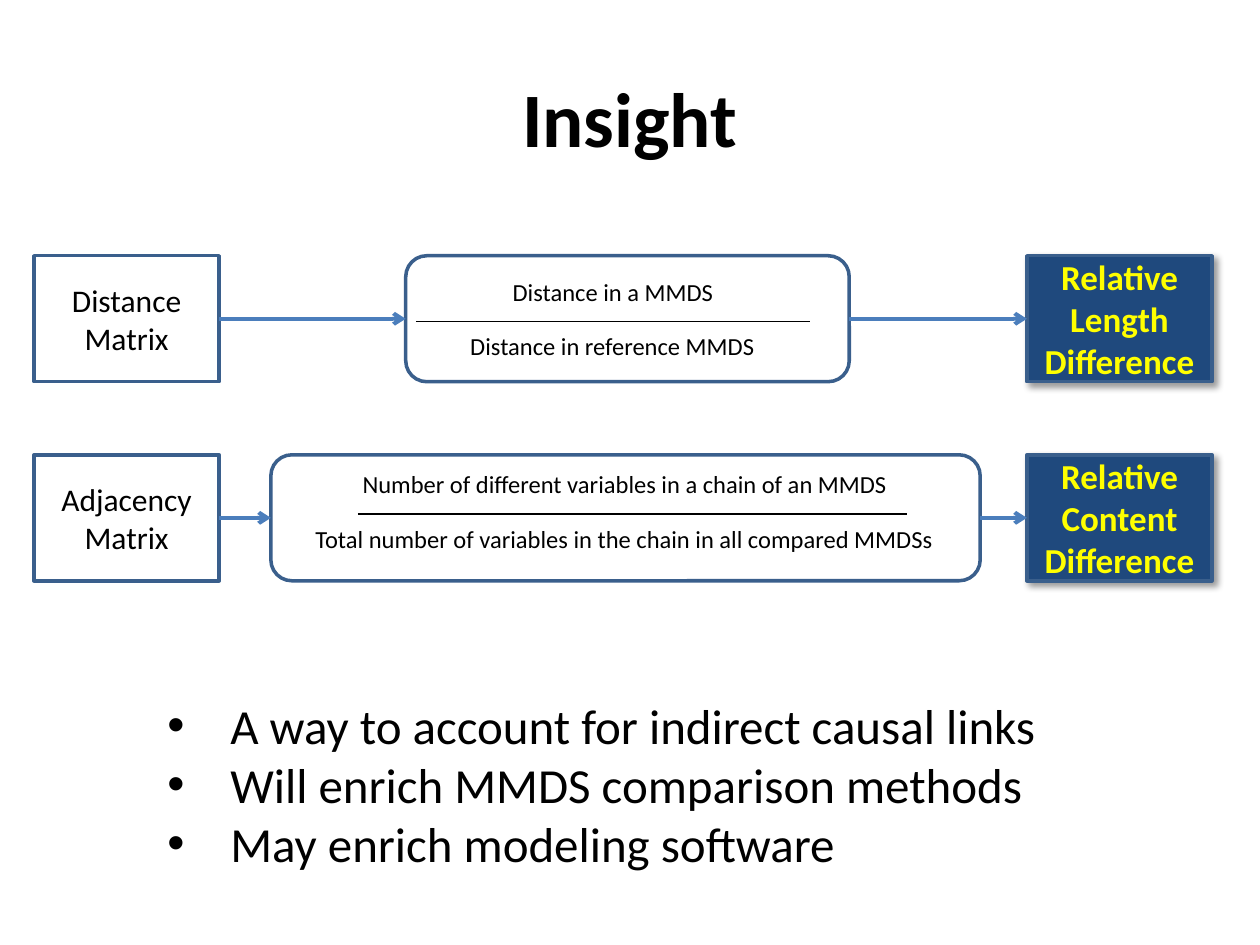
from lxml import etree
from pptx import Presentation
from pptx.dml.color import RGBColor
from pptx.enum.shapes import MSO_CONNECTOR, MSO_SHAPE
from pptx.enum.text import MSO_ANCHOR, PP_ALIGN
from pptx.oxml.ns import qn
from pptx.util import Pt

PX = 9144
TITLE_ONLY = 5
FONT = "Calibri"
BLACK, BORDER, ARROW = "000000", "3A5F8C", "4B7EBC"
NAVY, YELLOW = "1F497D", "FFFF00"
RECTANGLE, ROUNDED = MSO_SHAPE.RECTANGLE, MSO_SHAPE.ROUNDED_RECTANGLE
STRAIGHT = MSO_CONNECTOR.STRAIGHT
MIDDLE, TOP = MSO_ANCHOR.MIDDLE, MSO_ANCHOR.TOP
CENTER, LEFT = PP_ALIGN.CENTER, PP_ALIGN.LEFT
LEFT_SIDE, RIGHT_SIDE = 1, 3
BOX_HEIGHT, BOX_WIDTH = 100, 147
SOURCE_LEFT, RESULT_LEFT = 27, 815
CAPTION_HEIGHT = 34

ROWS = [
    {
        "top": 203,
        "source": ["Distance", "Matrix"],
        "formula": (322, 352),
        "numerator": ("Distance in a MMDS", 396, 215, 181),
        "denominator": ("Distance in reference MMDS", 362, 258, 248),
        "bar": (330, 643, 255),
        "result": ["Relative Length Difference"],
    },
    {
        "top": 361,
        "source": ["Adjacency", "Matrix"],
        "formula": (215, 563),
        "numerator": ("Number of different variables in a chain of an MMDS", 276, 367, 440),
        "denominator": (
            "Total number of variables in the chain in all compared MMDSs", 238, 411, 515),
        "bar": (284, 720, 408),
        "result": ["Relative Content", "Difference"],
    },
]
BULLETS = [
    "A way to account for indirect causal links",
    "Will enrich MMDS comparison methods",
    "May enrich modeling software",
]


def color(hex_string):
    return RGBColor.from_string(hex_string)


def px(*lengths):
    return [length * PX for length in lengths]


def write(shape, lines, size, fill=BLACK, bold=False, align=CENTER,
          anchor=MIDDLE, wrap=True, bullet_indent=0):
    frame = shape.text_frame
    frame.word_wrap = wrap
    frame.vertical_anchor = anchor
    for index, line in enumerate(lines):
        paragraph = frame.add_paragraph() if index else frame.paragraphs[0]
        paragraph.alignment = align
        run = paragraph.add_run()
        run.text = line
        run.font.name = FONT
        run.font.size = Pt(size)
        run.font.bold = bold
        run.font.color.rgb = color(fill)
        if bullet_indent:
            add_bullet(paragraph, bullet_indent * PX)


def add_bullet(paragraph, indent):
    properties = paragraph._p.get_or_add_pPr()
    properties.set("marL", str(indent))
    properties.set("indent", str(-indent))
    etree.SubElement(properties, qn("a:buFont"), typeface="Arial")
    etree.SubElement(properties, qn("a:buChar"), char="•")


def add_box(slide, kind, left, top, width, fill=None):
    box = slide.shapes.add_shape(kind, *px(left, top, width, BOX_HEIGHT))
    box.shadow.inherit = False
    if fill:
        box.fill.solid()
        box.fill.fore_color.rgb = color(fill)
    else:
        box.fill.background()
    box.line.color.rgb = color(BORDER)
    box.line.width = Pt(2)
    return box


def add_shadow(box):
    effects = box._element.spPr.find(qn("a:effectLst"))
    shadow = etree.SubElement(
        effects, qn("a:outerShdw"), blurRad=str(Pt(4)), dist=str(Pt(3)),
        dir=str(45 * 60000), algn="tl", rotWithShape="0")
    shade = etree.SubElement(shadow, qn("a:srgbClr"), val=BLACK)
    etree.SubElement(shade, qn("a:alpha"), val="40000")


def add_caption(slide, text, left, top, width):
    caption = slide.shapes.add_textbox(*px(left, top, width, CAPTION_HEIGHT))
    write(caption, [text], 14, anchor=TOP, wrap=False)


def add_line(slide, start, end, stroke, width):
    line = slide.shapes.add_connector(STRAIGHT, *px(*start, *end))
    line.line.color.rgb = color(stroke)
    line.line.width = Pt(width)
    etree.SubElement(line._element.spPr, qn("a:effectLst"))
    return line


def add_arrow(slide, source, target):
    arrow = add_line(slide, (0, 0), (0, 0), ARROW, 2.25)
    arrow.begin_connect(source, RIGHT_SIDE)
    arrow.end_connect(target, LEFT_SIDE)
    etree.SubElement(arrow.line._get_or_add_ln(), qn("a:tailEnd"), type="arrow")


def add_row(slide, row):
    top = row["top"]
    source = add_box(slide, RECTANGLE, SOURCE_LEFT, top, BOX_WIDTH)
    write(source, row["source"], 18)
    formula_left, formula_width = row["formula"]
    formula = add_box(slide, ROUNDED, formula_left, top, formula_width)
    add_caption(slide, *row["numerator"])
    add_caption(slide, *row["denominator"])
    bar_left, bar_right, bar_top = row["bar"]
    add_line(slide, (bar_left, bar_top), (bar_right, bar_top), BLACK, 0.75)
    result = add_box(slide, RECTANGLE, RESULT_LEFT, top, BOX_WIDTH, fill=NAVY)
    add_shadow(result)
    write(result, row["result"], 20, fill=YELLOW, bold=True)
    add_arrow(slide, source, formula)
    add_arrow(slide, formula, result)


def add_title(slide, text):
    title = slide.shapes.title
    title.left, title.top, title.width, title.height = px(50, 30, 900, 125)
    write(title, [text], 44, bold=True)


def add_bullets(slide, lines):
    box = slide.shapes.add_textbox(*px(123, 547, 727, 151))
    write(box, lines, 28, align=LEFT, anchor=TOP, wrap=False, bullet_indent=50)


def main():
    presentation = Presentation()
    presentation.slide_width, presentation.slide_height = px(1000, 750)
    slide = presentation.slides.add_slide(presentation.slide_layouts[TITLE_ONLY])
    add_title(slide, "Insight")
    for row in ROWS:
        add_row(slide, row)
    add_bullets(slide, BULLETS)
    presentation.save("out.pptx")


if __name__ == "__main__":
    main()
